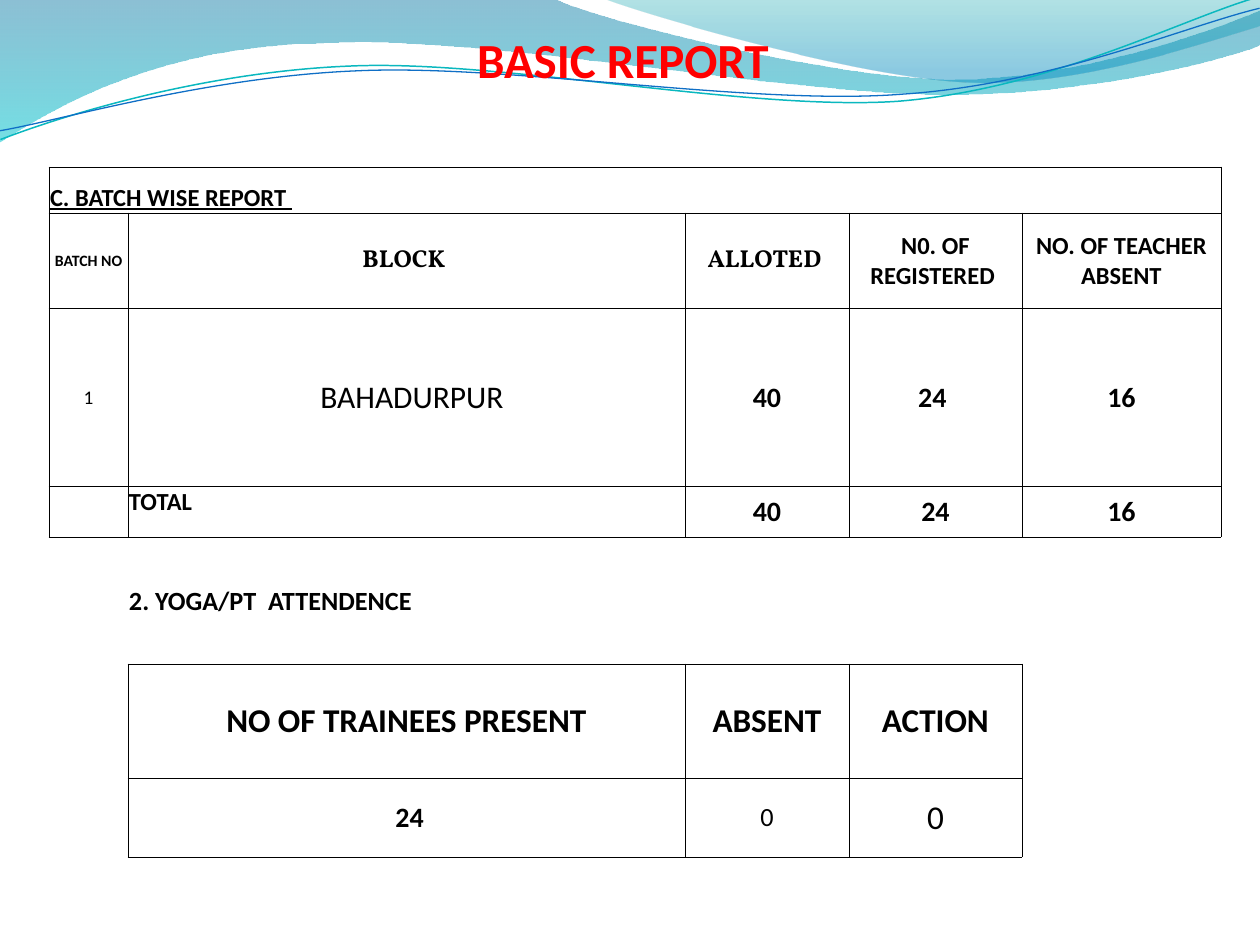
from dataclasses import dataclass
from typing import Optional

import pptx
import pptx.dml.color
import pptx.enum.text
import pptx.oxml.ns
import pptx.util
from lxml import etree

EMU_PER_PX = 914400 / 126
COLORS = {
    "text": "000000", "title": "FF0000", "paper": "FFFFFF",
    "wave_blue": "0074A1", "wave_cyan": "00C6CF",
    "crest_teal": "00A1A9", "crest_blue": "008BBF",
    "teal_line": "0AB8BF", "blue_line": "0F6FC6",
}
ALIGN = pptx.enum.text.PP_ALIGN
ANCHOR = pptx.enum.text.MSO_ANCHOR
qn = pptx.oxml.ns.qn


@dataclass
class Stop:
    position: float
    color: str
    opacity: int


@dataclass
class Wave:
    """Steps hold two numbers for a straight part, six for a cubic curve."""
    start: tuple[int, int]
    steps: list[tuple[int, ...]]
    stops: tuple[Stop, ...] = ()
    line: str = ""
    width: float = 0
    rotation: float = 0


@dataclass
class Entry:
    row: int
    column: int
    text: str
    size: int
    bold: bool = True
    font: str = "Calibri"
    underline: bool = False
    align: ALIGN = ALIGN.CENTER
    anchor: ANCHOR = ANCHOR.MIDDLE
    indent: int = 1


WAVES = [
    Wave((0, 0), [(554, -1), (600, 21, 837, 79, 955, 79),
                  (1075, 79, 1207, 33, 1260, 11), (1261, 45),
                  (1239, 55, 1096, 96, 940, 94), (784, 94, 481, 35, 324, 43),
                  (163, 45, 58, 105, -1, 142), (0, 0)],
         stops=(Stop(0, "wave_blue", 45), Stop(1, "wave_cyan", 55))),
    Wave((604, -1), [(641, 14, 859, 78, 969, 82),
                     (1079, 87, 1211, 40, 1260, 26), (1260, 0), (604, -1)],
         stops=(Stop(0, "crest_teal", 30), Stop(0.8, "crest_blue", 45))),
    Wave((-2, 110), [(58, 90, 200, 52, 350, 53), (499, 53, 745, 117, 896, 114),
                     (1049, 109, 1184, 45, 1260, 27)],
         line="teal_line", width=0.85, rotation=357.3),
    Wave((-2, 101), [(57, 94, 207, 57, 357, 58), (509, 58, 750, 112, 902, 107),
                     (1052, 104, 1188, 52, 1262, 38)],
         line="blue_line", width=0.75, rotation=357.3),
]

COLUMNS = [79, 557, 164, 173, 199]
ROWS = [46, 95, 178, 51, 33, 62, 32, 114, 79]
UNFILLED = {(2, 1), (2, 2), (2, 3), (2, 4), (3, 2), (3, 3), (3, 4), (8, 1), (8, 2)}
ENTRIES = [
    Entry(0, 0, "C. BATCH WISE REPORT ", 14, underline=True,
          align=ALIGN.LEFT, anchor=ANCHOR.BOTTOM),
    Entry(1, 0, "BATCH NO", 9),
    Entry(1, 1, "BLOCK ", 14, font="Vollkorn"),
    Entry(1, 2, "ALLOTED ", 14, font="Vollkorn"),
    Entry(1, 3, "N0. OF REGISTERED ", 14),
    Entry(1, 4, "NO. OF TEACHER ABSENT", 14),
    Entry(2, 0, "1", 11, bold=False),
    Entry(2, 1, "BAHADURPUR", 18, bold=False, indent=12),
    Entry(2, 2, "40", 16),
    Entry(2, 3, "24 ", 16),
    Entry(2, 4, "16", 16),
    Entry(3, 1, "TOTAL", 14, align=ALIGN.LEFT, anchor=ANCHOR.TOP),
    Entry(3, 2, "40", 16),
    Entry(3, 3, "24", 16),
    Entry(3, 4, "16", 16),
    Entry(5, 1, "2. YOGA/PT  ATTENDENCE", 15, align=ALIGN.LEFT),
    Entry(7, 1, "NO OF TRAINEES PRESENT", 19),
    Entry(7, 2, "ABSENT", 19),
    Entry(7, 3, "ACTION", 19),
    Entry(8, 1, " 24", 16),
    Entry(8, 2, "0", 15, bold=False),
    Entry(8, 3, "0", 19, bold=False),
]


def px(length: int) -> pptx.util.Emu:
    return pptx.util.Emu(round(length * EMU_PER_PX))


def rgb(name: str) -> pptx.dml.color.RGBColor:
    return pptx.dml.color.RGBColor.from_string(COLORS[name])


def bend_curves(shape, steps: list[tuple[int, ...]]) -> None:
    """Join the three segments of each curved step into one cubic curve."""
    segments = iter(list(shape._element.spPr.iter(qn("a:lnTo"))))
    for step in steps:
        parts = [next(segments) for _ in range(len(step) // 2)]
        if len(parts) == 1:
            continue
        curve = etree.Element(qn("a:cubicBezTo"))
        parts[0].addprevious(curve)
        for part in parts:
            curve.append(part[0])
            part.getparent().remove(part)


def draw_wave(slide, wave: Wave) -> None:
    builder = slide.shapes.build_freeform(*map(px, wave.start))
    for step in wave.steps:
        points = [(px(x), px(y)) for x, y in zip(step[::2], step[1::2])]
        builder.add_line_segments(points, close=False)
    if wave.stops:
        builder.add_line_segments([], close=True)
    shape = builder.convert_to_shape()
    bend_curves(shape, wave.steps)
    shape.shadow.inherit = False
    shape.rotation = wave.rotation
    if not wave.stops:
        shape.fill.background()
        shape.line.color.rgb = rgb(wave.line)
        shape.line.width = pptx.util.Pt(wave.width)
        return
    shape.line.fill.background()
    shape.fill.gradient()
    shape.fill.gradient_angle = 270
    for target, stop in zip(shape.fill.gradient_stops, wave.stops):
        target.position = stop.position
        target.color.rgb = rgb(stop.color)
    for color, stop in zip(shape._element.spPr.iter(qn("a:srgbClr")), wave.stops):
        etree.SubElement(color, qn("a:alpha"), val=str(stop.opacity * 1000))


def add_run(paragraph, text: str, size: int, color: str, bold: bool = True,
            font: str = "Calibri", underline: bool = False) -> None:
    run = paragraph.add_run()
    run.text = text
    run.font.size = pptx.util.Pt(size)
    run.font.name = font
    run.font.bold = bold
    run.font.underline = underline
    run.font.color.rgb = rgb(color)


def draw_title(slide) -> None:
    frame = slide.shapes.add_textbox(px(49), px(29), px(1148), px(59)).text_frame
    frame.word_wrap = True
    frame.vertical_anchor = ANCHOR.BOTTOM
    frame.margin_left = frame.margin_right = frame.margin_bottom = 0
    frame.margin_top = px(6)
    frame.paragraphs[0].alignment = ALIGN.CENTER
    add_run(frame.paragraphs[0], "BASIC REPORT", 28, "title")


def is_ruled(row: int, column: int) -> bool:
    """Tell whether a cell belongs to the batch grid or the attendance grid."""
    return (0 <= row <= 3 and 0 <= column <= 4) or (7 <= row <= 8 and 1 <= column <= 3)


def rule_cell(cell, row: int, column: int) -> None:
    """Rule each side that touches a ruled cell, and clear the others."""
    neighbours = {"lnL": (row, column - 1), "lnR": (row, column + 1),
                  "lnT": (row - 1, column), "lnB": (row + 1, column)}
    properties = cell._tc.get_or_add_tcPr()
    for order, (side, neighbour) in enumerate(neighbours.items()):
        edge = etree.Element(qn(f"a:{side}"), w=str(pptx.util.Pt(0.5)))
        if is_ruled(row, column) or is_ruled(*neighbour):
            fill = etree.SubElement(edge, qn("a:solidFill"))
            etree.SubElement(fill, qn("a:srgbClr"), val=COLORS["text"])
        else:
            etree.SubElement(edge, qn("a:noFill"))
        properties.insert(order, edge)


def fill_cell(cell, row: int, column: int, entry: Optional[Entry]) -> None:
    cell.margin_left = cell.margin_right = cell.margin_top = px(1)
    cell.margin_bottom = 0
    if is_ruled(row, column) and (row, column) not in UNFILLED:
        cell.fill.solid()
        cell.fill.fore_color.rgb = rgb("paper")
    else:
        cell.fill.background()
    rule_cell(cell, row, column)
    paragraph = cell.text_frame.paragraphs[0]
    if entry is None:
        etree.SubElement(paragraph._p, qn("a:endParaRPr"), sz="800")
        return
    cell.margin_left = px(entry.indent)
    cell.vertical_anchor = entry.anchor
    paragraph.alignment = entry.align
    add_run(paragraph, entry.text, entry.size, "text", entry.bold, entry.font, entry.underline)


def draw_report(slide) -> None:
    table = slide.shapes.add_table(len(ROWS), len(COLUMNS), px(49), px(167),
                                   px(sum(COLUMNS)), px(sum(ROWS))).table
    table.first_row = table.horz_banding = False
    for column, width in zip(table.columns, COLUMNS):
        column.width = px(width)
    for row, height in zip(table.rows, ROWS):
        row.height = px(height)
    entries = {(entry.row, entry.column): entry for entry in ENTRIES}
    for row in range(len(ROWS)):
        for column in range(len(COLUMNS)):
            fill_cell(table.cell(row, column), row, column, entries.get((row, column)))
    table.cell(0, 0).merge(table.cell(0, 4))
    table.cell(5, 1).merge(table.cell(5, 3))


def main() -> None:
    deck = pptx.Presentation()
    deck.slide_width, deck.slide_height = px(1260), px(945)
    slide = deck.slides.add_slide(deck.slide_layouts[6])
    for wave in WAVES:
        draw_wave(slide, wave)
    draw_title(slide)
    draw_report(slide)
    deck.save("out.pptx")


if __name__ == "__main__":
    main()
